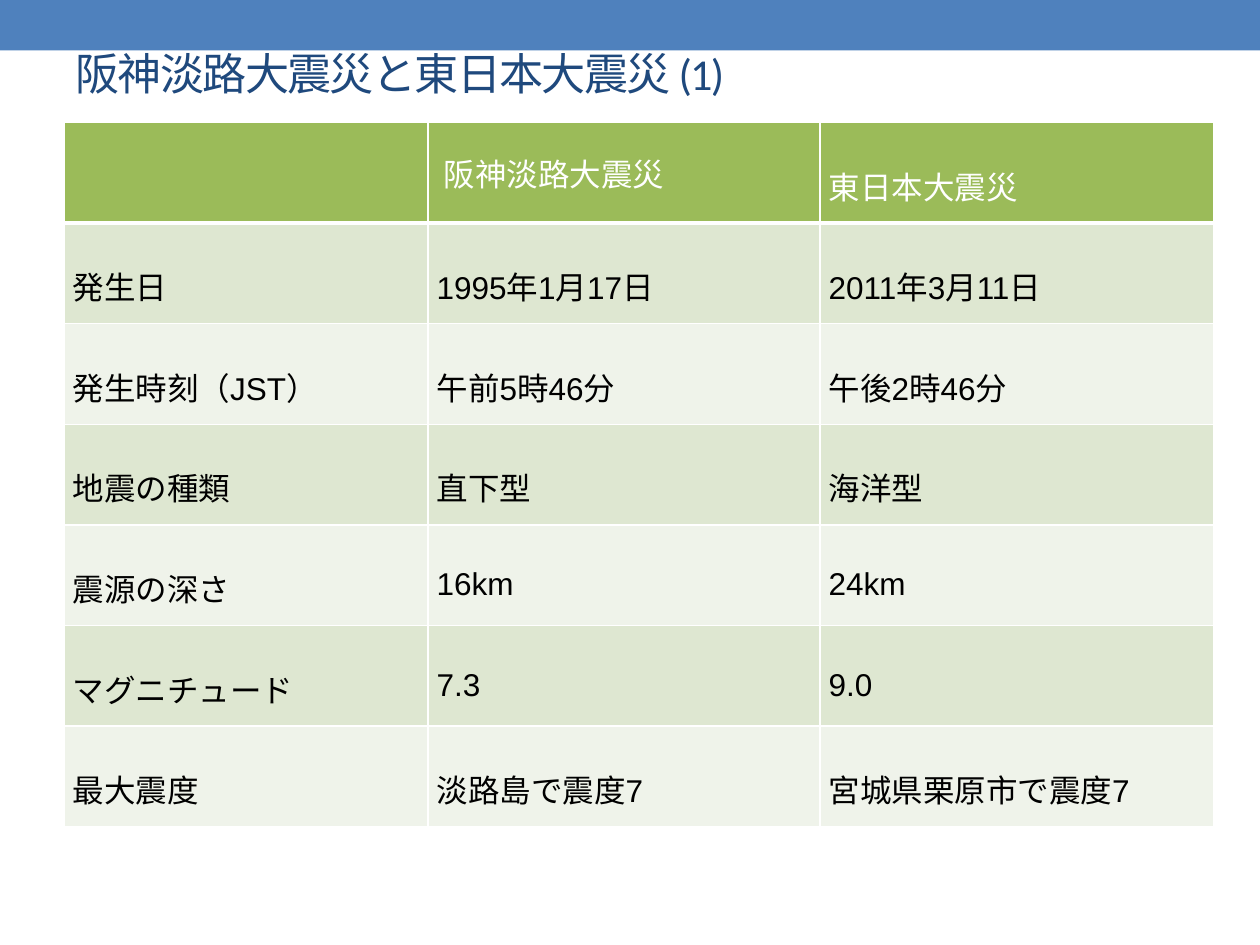
from dataclasses import dataclass

from lxml import etree
from pptx import Presentation
from pptx.dml.color import RGBColor
from pptx.enum import shapes, text
from pptx.oxml import ns
from pptx.util import Pt


@dataclass(frozen=True)
class Theme:
    banner: str = "4F81BD"
    title: str = "1F497D"
    header: str = "9BBB59"
    bands: tuple = ("DEE7D1", "EFF3EA")
    light: str = "FFFFFF"
    dark: str = "000000"
    title_font: str = "Calibri"
    header_font: str = "TeX Gyre Schola"
    body_font: str = "Arial"
    title_size: float = 25.2
    table_size: float = 18


THEME = Theme()
SLIDE_WIDTH, SLIDE_HEIGHT = 720, 540
COLUMN_WIDTHS = (208, 224, 225)
ROW_HEIGHT = 57.5

EARTHQUAKES = [
    ("", " 阪神淡路大震災", "東日本大震災"),
    ("発生日", "1995年1月17日", "2011年3月11日"),
    ("発生時刻（JST）", "午前5時46分", "午後2時46分"),
    ("地震の種類", "直下型", "海洋型"),
    ("震源の深さ", "16km", "24km"),
    ("マグニチュード", "7.3", "9.0"),
    ("最大震度", "淡路島で震度7", "宮城県栗原市で震度7"),
]


def style_run(run, font, size, color):
    run.font.name = font
    run.font.size = Pt(size)
    run.font.bold = False
    run.font.color.rgb = RGBColor.from_string(color)


def set_title(slide, wording):
    title = slide.shapes.title
    title.left, title.top, title.width, title.height = Pt(36), Pt(21.6), Pt(648), Pt(40.3)
    frame = title.text_frame
    frame.text = wording
    frame.auto_size = text.MSO_AUTO_SIZE.NONE
    frame.vertical_anchor = text.MSO_ANCHOR.MIDDLE
    paragraph = frame.paragraphs[0]
    paragraph.alignment = text.PP_ALIGN.LEFT
    run = paragraph.runs[0]
    style_run(run, THEME.title_font, THEME.title_size, THEME.title)
    run.font._element.set("spc", "-100")
    return title


def add_banner(slide, title):
    """Add the strip along the top edge, behind the title."""
    banner = slide.shapes.add_shape(
        shapes.MSO_SHAPE.RECTANGLE, 0, 0, Pt(SLIDE_WIDTH), Pt(28.8))
    banner.shadow.inherit = False
    banner.fill.solid()
    banner.fill.fore_color.rgb = RGBColor.from_string(THEME.banner)
    banner.line.fill.background()
    title.element.addprevious(banner.element)


def set_borders(cell, bottom_width):
    properties = cell._tc.get_or_add_tcPr()
    for side, width in (("L", 1), ("R", 1), ("T", 1), ("B", bottom_width)):
        border = etree.SubElement(properties, ns.qn(f"a:ln{side}"), w=str(Pt(width)))
        fill = etree.SubElement(border, ns.qn("a:solidFill"))
        etree.SubElement(fill, ns.qn("a:srgbClr"), val=THEME.light)


def fill_cell(cell, wording, row, column):
    is_header = row == 0
    set_borders(cell, 3 if is_header else 1)
    cell.fill.solid()
    background = THEME.header if is_header else THEME.bands[(row - 1) % 2]
    cell.fill.fore_color.rgb = RGBColor.from_string(background)
    cell.vertical_anchor = text.MSO_ANCHOR.MIDDLE
    cell.margin_left = cell.margin_right = Pt(5)
    cell.margin_top = cell.margin_bottom = 0
    if not wording:
        return
    cell.text_frame.text = wording
    paragraph = cell.text_frame.paragraphs[0]
    if not (is_header and column == 1):
        paragraph.line_spacing = 1.55
        paragraph.space_before = Pt(17)
    font, color = ((THEME.header_font, THEME.light) if is_header
                   else (THEME.body_font, THEME.dark))
    style_run(paragraph.runs[0], font, THEME.table_size, color)


def add_comparison(slide, rows):
    table = slide.shapes.add_table(
        len(rows), len(COLUMN_WIDTHS), Pt(36.5), Pt(70),
        Pt(sum(COLUMN_WIDTHS)), Pt(ROW_HEIGHT * len(rows))).table
    for column, width in zip(table.columns, COLUMN_WIDTHS):
        column.width = Pt(width)
    for r, values in enumerate(rows):
        table.rows[r].height = Pt(ROW_HEIGHT)
        for c, wording in enumerate(values):
            fill_cell(table.cell(r, c), wording, r, c)


def main():
    deck = Presentation()
    deck.slide_width, deck.slide_height = Pt(SLIDE_WIDTH), Pt(SLIDE_HEIGHT)
    slide = deck.slides.add_slide(deck.slide_layouts[5])
    title = set_title(slide, "阪神淡路大震災と東日本大震災 (1)")
    add_banner(slide, title)
    add_comparison(slide, EARTHQUAKES)
    deck.save("out.pptx")


if __name__ == "__main__":
    main()
